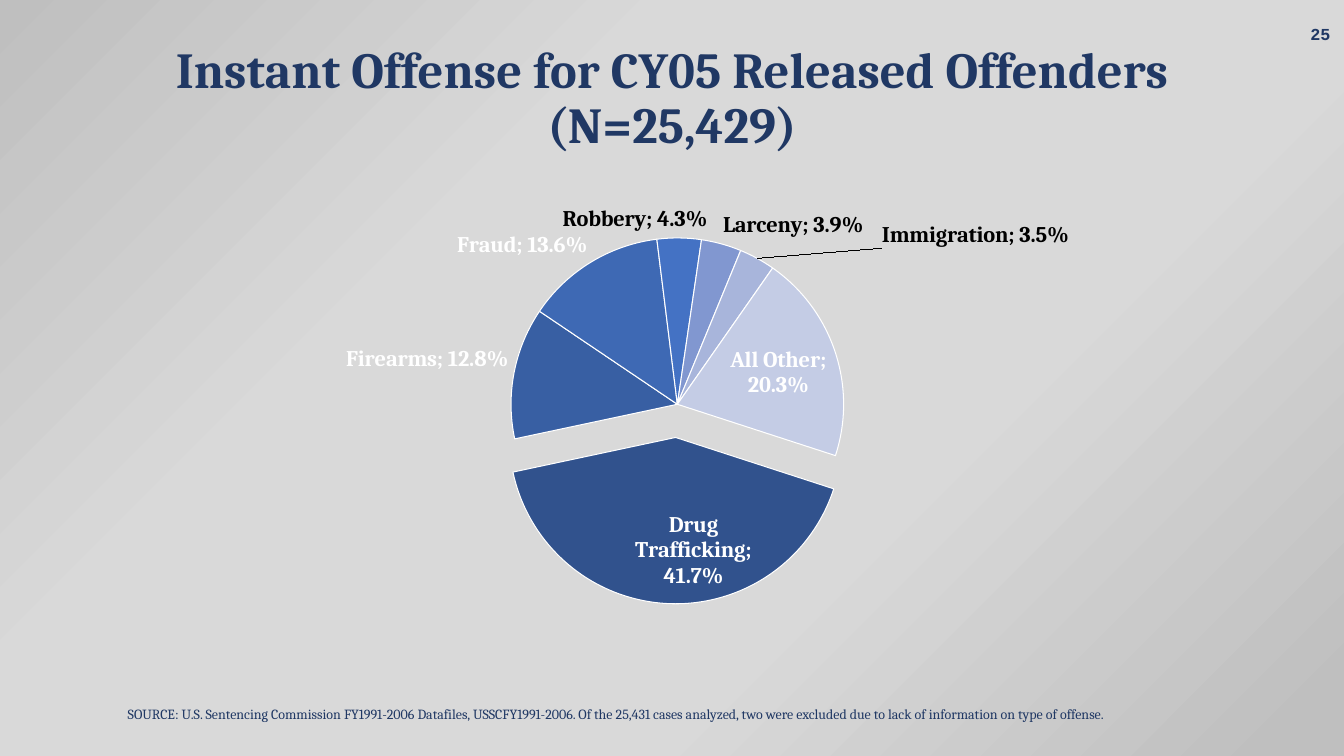
import pptx
import pptx.chart.data
import pptx.dml.color
import pptx.enum.chart
import pptx.enum.text
import pptx.oxml
import pptx.oxml.ns
import pptx.util

Cm = pptx.util.Cm
Pt = pptx.util.Pt
qn = pptx.oxml.ns.qn
SPOT = pptx.enum.chart.XL_LABEL_POSITION
ALIGN = pptx.enum.text.PP_ALIGN
ANCHOR = pptx.enum.text.MSO_ANCHOR

HUES = {
    "navy": "203864", "white": "FFFFFF", "black": "000000",
    "edge": "BFBFBF", "mid": "D9D9D9",
    "drug": "31528D", "arms": "385FA3", "fraud": "3E69B4", "rob": "4472C4",
    "theft": "8197D0", "border": "A8B5DB", "other": "C4CCE5",
}
SHADES = [(0, "edge"), (33, "mid"), (66, "mid"), (97, "edge")]
SLICES = [
    ("Drug Trafficking", 0.417, "drug", "white", SPOT.CENTER, (0.02, 0.06)),
    ("Firearms", 0.128, "arms", "white", SPOT.OUTSIDE_END, None),
    ("Fraud", 0.136, "fraud", "white", SPOT.OUTSIDE_END, None),
    ("Robbery", 0.043, "rob", "black", SPOT.OUTSIDE_END, (-0.04, 0)),
    ("Larceny", 0.039, "theft", "black", SPOT.OUTSIDE_END, None),
    ("Immigration", 0.035, "border", "black", SPOT.OUTSIDE_END, (0.11, -0.01)),
    ("All Other", 0.203, "other", "white", SPOT.CENTER, (0.02, -0.01)),
]


def tint(name):
    return pptx.dml.color.RGBColor.from_string(HUES[name])


def style(font, hue, **values):
    for key, value in values.items():
        setattr(font, key, value)
    font.color.rgb = tint(hue)


def node(tag, body="", attrs=""):
    space = pptx.oxml.ns.nsdecls(tag.split(":")[0])
    return pptx.oxml.parse_xml(f"<{tag} {space} {attrs}>{body}</{tag}>")


def layout(**values):
    body = "".join(f'<c:{key} val="{value}"/>' for key, value in values.items())
    return node("c:layout", f"<c:manualLayout>{body}</c:manualLayout>")


def backdrop(slide):
    stops = "".join(
        f'<a:gs pos="{place * 1000}"><a:srgbClr val="{HUES[hue]}"/></a:gs>'
        for place, hue in SHADES)
    fill = (f'<a:gradFill rotWithShape="1"><a:gsLst>{stops}</a:gsLst>'
            '<a:path path="circle"><a:fillToRect r="100000" b="100000"/></a:path>'
            '</a:gradFill><a:effectLst/>')
    space = pptx.oxml.ns.nsdecls("a")
    back = node("p:bg", f"<p:bgPr {space}>{fill}</p:bgPr>")
    slide._element.cSld.insert(0, back)


def words(slide, box, text, align, anchor, **look):
    frame = slide.shapes.add_textbox(*box).text_frame
    frame.word_wrap = True
    frame.vertical_anchor = anchor
    para = frame.paragraphs[0]
    para.text = text
    para.alignment = align
    para.line_spacing = 0.9
    for run in para.runs:
        style(run.font, "navy", **look)


def label(point, hue, spot, shift):
    tag = point.data_label
    style(tag.font, hue, size=Pt(16), bold=True, name="Cambria")
    tag.position = spot
    item = tag._dLbl
    for key, value in {"CatName": 1, "Val": 1, "Percent": 0}.items():
        item.find(qn(f"c:show{key}")).set("val", str(value))
    item.append(node("c:separator", ";\n" if spot == SPOT.CENTER else "; "))
    form = node("c:numFmt", attrs='formatCode="0.0%" sourceLinked="0"')
    item.find(qn("c:idx")).addnext(form)
    if shift:
        form.addprevious(layout(x=shift[0], y=shift[1]))


def pie(slide, box):
    data = pptx.chart.data.CategoryChartData(number_format="0.0%")
    data.categories = [part[0] for part in SLICES]
    data.add_series("Series 1", [part[1] for part in SLICES])
    chart = slide.shapes.add_chart(
        pptx.enum.chart.XL_CHART_TYPE.PIE, *box, data).chart
    chart.has_title = False
    chart.has_legend = False
    style(chart.font, "black", size=Pt(10), name="Cambria")
    plot = chart.plots[0]
    plot.vary_by_categories = True
    root = plot._element
    for old in root.findall(qn("c:firstSliceAng")):
        root.remove(old)
    root.append(node("c:firstSliceAng", attrs='val="108"'))
    area = root.getparent()
    for old in area.findall(qn("c:layout")):
        area.remove(old)
    area.insert(0, layout(layoutTarget="inner", xMode="edge", yMode="edge",
                          x=0.35, y=0.12, w=0.3, h=0.67))
    row = plot.series[0]
    tags = row.data_labels
    style(tags.font, "black", size=Pt(16), bold=True, name="Cambria")
    looks = {"show_value": True, "show_category_name": True,
             "number_format": "0.0%", "number_format_is_linked": False}
    for key, value in looks.items():
        setattr(tags, key, value)
    for rank, (_, _, hue, ink, spot, shift) in enumerate(SLICES):
        point = row.points[rank]
        point.format.fill.solid()
        point.format.fill.fore_color.rgb = tint(hue)
        point.format.line.color.rgb = tint("white")
        point.format.line.width = Pt(0.75)
        label(point, ink, spot, shift)
    burst = node("c:explosion", attrs='val="20"')
    row._element.find(qn("c:dPt")).find(qn("c:spPr")).addprevious(burst)


def main():
    deck = pptx.Presentation()
    deck.slide_width = Cm(33.87)
    deck.slide_height = Cm(19.05)
    slide = deck.slides.add_slide(deck.slide_layouts[6])
    backdrop(slide)
    words(slide, (Cm(26.16), Cm(0.38), Cm(7.62), Cm(1.02)), "25",
          ALIGN.RIGHT, ANCHOR.MIDDLE, size=Pt(12), bold=True, name="Courier New")
    words(slide, (0, Cm(1.02), deck.slide_width, Cm(3.35)),
          "Instant Offense for CY05 Released Offenders\v(N=25,429)",
          ALIGN.CENTER, ANCHOR.TOP, size=Pt(36), bold=True, name="Cambria")
    pie(slide, (Cm(3.1), Cm(4.47), Cm(27.94), Cm(12.57)))
    words(slide, (Cm(2.97), Cm(17.12), Cm(28.19), Cm(1.22)),
          "SOURCE: U.S. Sentencing Commission FY1991-2006 Datafiles, "
          "USSCFY1991-2006. Of the 25,431 cases analyzed, two were excluded "
          "due to lack of information on type of offense.",
          ALIGN.LEFT, ANCHOR.BOTTOM, size=Pt(10), name="Cambria")
    deck.save("out.pptx")


if __name__ == "__main__":
    main()
